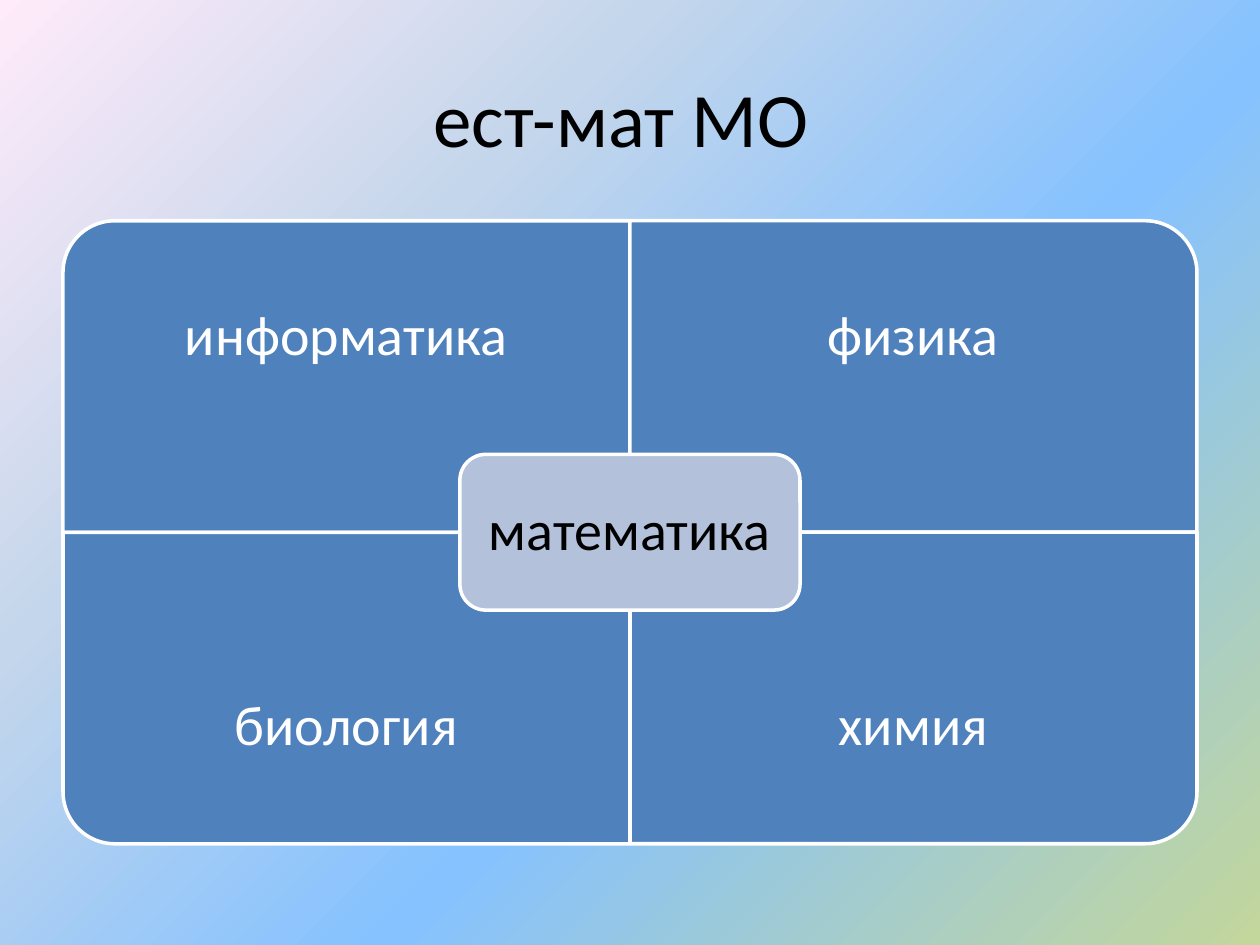
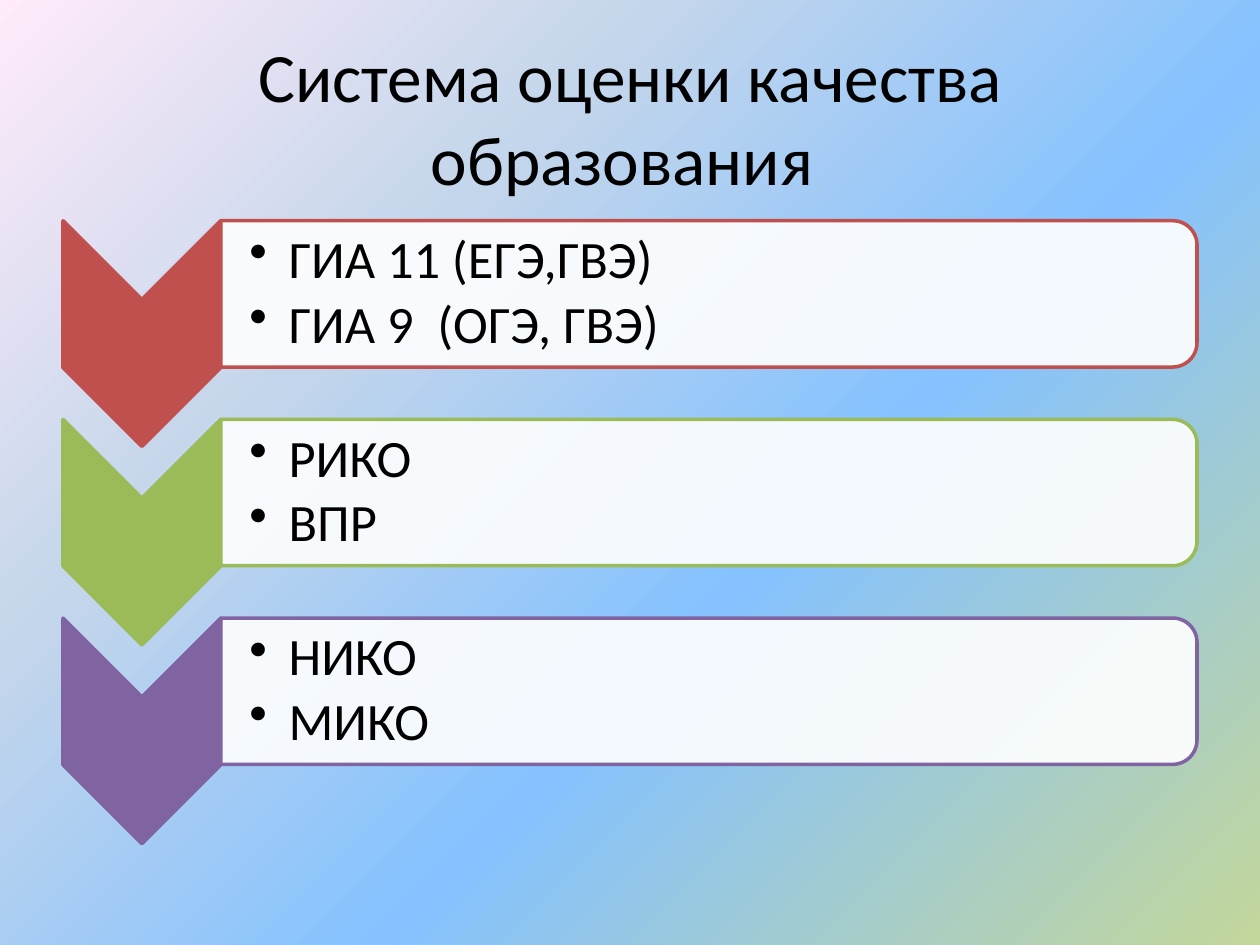
from dataclasses import dataclass
from pptx import Presentation
from pptx.dml.color import RGBColor
from pptx.enum.shapes import MSO_SHAPE
from pptx.enum.text import MSO_ANCHOR, PP_ALIGN
from pptx.oxml import parse_xml
from pptx.oxml.ns import nsdecls, qn
from pptx.oxml.xmlchemy import OxmlElement
from pptx.presentation import Presentation as Deck
from pptx.shapes.autoshape import Shape
from pptx.slide import Slide
from pptx.util import Cm, Pt

FONT = "Calibri"
BLACK = "000000"
WHITE = "FFFFFF"
SUBJECT_BLUE = "4F81BD"
CENTRE_BLUE = "B3C1DB"
BACKGROUND_STOPS = [
    (0, "C3D69B", 100),
    (40, "85C2FF", 91),
    (70, "C4D6EB", 100),
    (100, "FFEBFA", 100),
]


@dataclass(frozen=True)
class Box:
    left: float
    top: float
    width: float
    height: float

    def inset(self, gap: float) -> "Box":
        return Box(self.left + gap, self.top + gap, self.width - 2 * gap, self.height - 2 * gap)

    def turned(self) -> "Box":
        shift = (self.width - self.height) / 2
        return Box(self.left + shift, self.top - shift, self.height, self.width)

    def lengths(self) -> list[Cm]:
        return [Cm(value) for value in (self.left, self.top, self.width, self.height)]


@dataclass(frozen=True)
class TextStyle:
    size: float
    color: str = BLACK
    line_spacing: float = 0.9
    space_after: float = 0
    insets: tuple[float, float, float, float] = (0.25, 0.13, 0.25, 0.13)
    bullet_indent: float = 0


@dataclass(frozen=True)
class Subject:
    name: str
    column: int
    row: int
    rotation: int


@dataclass(frozen=True)
class Assessment:
    color: str
    exams: tuple[str, str]


TITLE_BOX = Box(1.27, 0.76, 22.86, 3.18)
DIAGRAM = Box(1.27, 4.45, 22.86, 12.56)
SUBJECTS = [
    Subject("информатика", 0, 0, 270),
    Subject("физика", 1, 0, 0),
    Subject("биология", 0, 1, 180),
    Subject("химия", 1, 1, 90),
]
ASSESSMENTS = [
    Assessment("C0504D", ("ГИА 11 (ЕГЭ,ГВЭ)", "ГИА 9  (ОГЭ, ГВЭ)")),
    Assessment("9BBB59", ("РИКО", "ВПР")),
    Assessment("8064A2", ("НИКО", "МИКО")),
]


def rgb(color: str) -> RGBColor:
    return RGBColor.from_string(color)


def paint_background(deck: Deck) -> None:
    master = deck.slide_master
    master.background.fill.gradient()
    stops = "".join(
        f'<a:gs pos="{position * 1000}"><a:srgbClr val="{color}">'
        f'<a:alpha val="{opacity * 1000}"/></a:srgbClr></a:gs>'
        for position, color, opacity in BACKGROUND_STOPS
    )
    gradient = parse_xml(
        f'<a:gradFill {nsdecls("a")} rotWithShape="1"><a:gsLst>{stops}</a:gsLst>'
        '<a:path path="circle"><a:fillToRect l="100000" t="100000"/></a:path></a:gradFill>'
    )
    plain = master.element.find(".//" + qn("a:gradFill"))
    plain.getparent().replace(plain, gradient)


def add_block(
    page: Slide, kind: MSO_SHAPE, box: Box, fill: str, line: str, rotation: int = 0
) -> Shape:
    frame = box.turned() if rotation % 180 else box
    block = page.shapes.add_shape(kind, *frame.lengths())
    block.rotation = rotation
    block.shadow.inherit = False
    block.fill.solid()
    block.fill.fore_color.rgb = rgb(fill)
    block.line.color.rgb = rgb(line)
    block.line.width = Pt(2)
    return block


def set_opacity(block: Shape, percent: int) -> None:
    alpha = OxmlElement("a:alpha")
    alpha.set("val", str(percent * 1000))
    block.element.spPr.find(qn("a:solidFill"))[0].append(alpha)


def add_text(page: Slide, box: Box, lines: tuple[str, ...], style: TextStyle) -> None:
    frame = page.shapes.add_textbox(*box.lengths()).text_frame
    frame.word_wrap = True
    frame.vertical_anchor = MSO_ANCHOR.MIDDLE
    frame.margin_left, frame.margin_top, frame.margin_right, frame.margin_bottom = [
        Cm(inset) for inset in style.insets
    ]
    for index, line in enumerate(lines):
        para = frame.add_paragraph() if index else frame.paragraphs[0]
        para.line_spacing = style.line_spacing
        para.space_after = Pt(style.size * style.space_after)
        if style.bullet_indent:
            add_bullet(para, style.bullet_indent)
        else:
            para.alignment = PP_ALIGN.CENTER
        span = para.add_run()
        span.text = line
        span.font.name = FONT
        span.font.size = Pt(style.size)
        span.font.color.rgb = rgb(style.color)


def add_bullet(para, indent: float) -> None:
    para.level = 1
    para.alignment = PP_ALIGN.LEFT
    properties = para._p.get_or_add_pPr()
    properties.set("marL", str(Cm(indent)))
    properties.set("indent", str(-Cm(indent)))
    bullet = OxmlElement("a:buChar")
    bullet.set("char", "•")
    properties.append(bullet)


def add_page(deck: Deck, title: str, size: float) -> Slide:
    page = deck.slides.add_slide(deck.slide_layouts[6])
    add_text(page, TITLE_BOX, (title,), TextStyle(size, line_spacing=1.0))
    return page


def build_subjects(deck: Deck) -> None:
    page = add_page(deck, "ест-мат МО ", 44)
    width, height = DIAGRAM.width / 2, DIAGRAM.height / 2
    label_height = height * 0.75
    label_style = TextStyle(32, WHITE, space_after=0.35, insets=(0.64,) * 4)
    for subject in SUBJECTS:
        left = DIAGRAM.left + subject.column * width
        top = DIAGRAM.top + subject.row * height
        cell = Box(left, top, width, height)
        add_block(
            page, MSO_SHAPE.ROUND_1_RECTANGLE, cell, SUBJECT_BLUE, WHITE, subject.rotation
        )
        label_top = top + subject.row * (height - label_height)
        add_text(page, Box(left, label_top, width, label_height), (subject.name,), label_style)

    centre_width, centre_height = width * 0.6, height / 2
    centre = Box(
        DIAGRAM.left + width - centre_width / 2,
        DIAGRAM.top + height - centre_height / 2,
        centre_width,
        centre_height,
    )
    add_block(page, MSO_SHAPE.ROUNDED_RECTANGLE, centre, CENTRE_BLUE, WHITE)
    centre_style = TextStyle(32, space_after=0.35, insets=(0.33,) * 4)
    add_text(page, centre.inset(0.15), ("математика",), centre_style)


def build_assessments(deck: Deck) -> None:
    page = add_page(deck, "Система оценки качества образования ", 39.6)
    chevron_width, chevron_height = 3.18, 4.55
    bar_height, corner_gap = 2.95, 0.14
    step = (DIAGRAM.height - chevron_height) / (len(ASSESSMENTS) - 1)
    style = TextStyle(
        30, space_after=0.15, insets=(0.58, 0.05, 0.05, 0.05), bullet_indent=0.79
    )
    for index, assessment in enumerate(ASSESSMENTS):
        top = DIAGRAM.top + index * step
        color = assessment.color
        chevron = Box(DIAGRAM.left, top, chevron_width, chevron_height)
        add_block(page, MSO_SHAPE.CHEVRON, chevron, color, color, 90)
        bar_left = DIAGRAM.left + chevron_width
        bar_width = DIAGRAM.width - chevron_width
        bar = Box(bar_left, top, bar_width, bar_height)
        set_opacity(
            add_block(page, MSO_SHAPE.ROUND_2_SAME_RECTANGLE, bar, WHITE, color, 90), 90
        )
        exam_box = Box(
            bar_left, top + corner_gap, bar_width - corner_gap, bar_height - 2 * corner_gap
        )
        add_text(page, exam_box, assessment.exams, style)


def main() -> None:
    deck = Presentation()
    deck.slide_width, deck.slide_height = Cm(25.4), Cm(19.05)
    paint_background(deck)
    build_subjects(deck)
    build_assessments(deck)
    deck.save("out.pptx")


if __name__ == "__main__":
    main()
